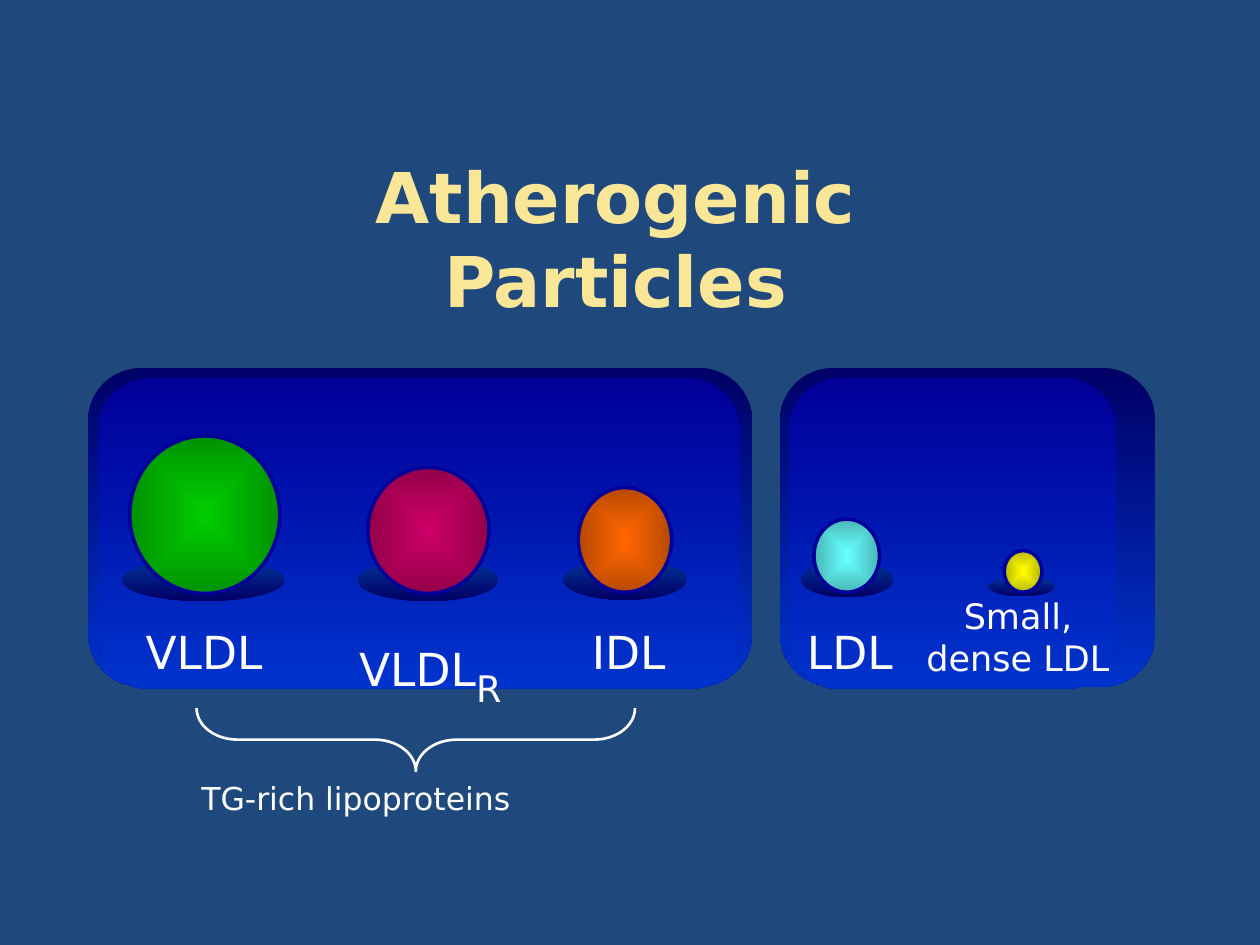
from dataclasses import dataclass

from lxml.etree import SubElement
from pptx import Presentation
from pptx.dml.color import RGBColor
from pptx.enum.shapes import MSO_SHAPE as Shape
from pptx.enum.text import MSO_AUTO_SIZE as AutoSize, PP_ALIGN as Align
from pptx.oxml.ns import qn
from pptx.util import Pt

PX = 9144  # 100 px to the inch


@dataclass(frozen=True)
class Theme:
    font: str = "DejaVu Sans"
    background: str = "1F497D"
    title: str = "F9E697"
    text: str = "FFFFFF"
    outline: str = "000099"
    panel_rim: tuple = ("000066", "0033CC")
    panel_face: tuple = ("000099", "0033CC")
    shadow: tuple = ("003399", "000066")
    title_size: int = 40
    label_size: int = 26
    subscript_size: int = 36
    small_size: int = 20
    note_size: int = 18


theme = Theme()
presentation = Presentation()
presentation.slide_width, presentation.slide_height = 1000 * PX, 750 * PX
slide = presentation.slides.add_slide(presentation.slide_layouts[6])
slide.background.fill.solid()
slide.background.fill.fore_color.rgb = RGBColor.from_string(theme.background)


def add_gradient_shape(kind, box, colors, radial=False):
    """Colours run top to bottom, or from the centre outwards if radial."""
    shape = slide.shapes.add_shape(kind, *(v * PX for v in box))
    shape.shadow.inherit = False
    shape.line.fill.background()
    shape.fill.gradient()
    shape.fill.gradient_angle = 270
    for stop, color, position in zip(shape.fill.gradient_stops, colors, (0, 1)):
        stop.color.rgb = RGBColor.from_string(color)
        stop.position = position
    if radial:
        gradient = shape._element.spPr.find(qn("a:gradFill"))
        linear = gradient.find(qn("a:lin"))
        path = SubElement(gradient, qn("a:path"), path="shape")
        SubElement(path, qn("a:fillToRect"), dict.fromkeys("ltrb", "50000"))
        gradient.replace(linear, path)
    return shape


def add_text(box, text, size, color=theme.text, align=Align.CENTER, wrap=False, bold=False):
    shape = slide.shapes.add_textbox(*(v * PX for v in box))
    frame = shape.text_frame
    frame.text = text
    frame.word_wrap = wrap
    frame.auto_size = AutoSize.SHAPE_TO_FIT_TEXT
    for paragraph in frame.paragraphs:
        paragraph.alignment = align
        for run in paragraph.runs:
            run.font.name = theme.font
            run.font.size = Pt(size)
            run.font.bold = bold
            run.font.color.rgb = RGBColor.from_string(color)
    return frame


# Panels: a dark rim with a lighter face on top
for box, colors in [
    ((619, 292, 298, 253), theme.panel_rim),
    ((70, 292, 527, 253), theme.panel_rim),
    ((626, 300, 260, 247), theme.panel_face),
    ((78, 300, 509, 247), theme.panel_face),
]:
    add_gradient_shape(Shape.ROUNDED_RECTANGLE, box, colors)

add_text((159, 117, 659, 145), "Atherogenic Particles", theme.title_size,
         theme.title, wrap=True, bold=True)
add_text((150, 613, 270, 40), "TG-rich lipoproteins", theme.note_size, align=Align.LEFT)

brace = slide.shapes.add_shape(Shape.LEFT_BRACE, 305 * PX, 413 * PX, 50 * PX, 348 * PX)
brace.rotation = 270
brace.adjustments[0], brace.adjustments[1] = 0.65, 0.5
brace.shadow.inherit = False
brace.fill.background()
brace.line.color.rgb = RGBColor.from_string(theme.text)
brace.line.width = Pt(1.5)

# Particles: label, label box, shadow box, ball box, ball colours
particles = [
    ("VLDL", (105, 490, 114, 54), (97, 444, 129, 33), (103, 346, 119, 125), ("00CC00", "009200")),
    ("VLDL", (273, 490, 137, 54), (284, 444, 111, 33), (292, 371, 96, 100), ("CC0066", "920049")),
    ("IDL", (457, 490, 84, 54), (447, 444, 98, 32), (459, 387, 74, 83), ("FF6600", "B64900")),
    ("LDL", (630, 490, 89, 54), (636, 446, 73, 28), (646, 412, 52, 58), ("66FFFF", "49B6B6")),
    ("Small,\ndense LDL", (708, 467, 200, 77), (785, 458, 52, 15), (797, 437, 30, 33),
     ("FFFF00", "B6B600")),
]
label_frames = []
for label, label_box, shadow_box, ball_box, colors in particles:
    two_lines = "\n" in label
    size = theme.small_size if two_lines else theme.label_size
    label_frames.append(add_text(label_box, label, size, wrap=two_lines))
    add_gradient_shape(Shape.OVAL, shadow_box, theme.shadow)
    ball = add_gradient_shape(Shape.OVAL, ball_box, colors, radial=True)
    ball.line.color.rgb = RGBColor.from_string(theme.outline)
    ball.line.width = Pt(2)

# The second particle is the VLDL remnant
subscript = label_frames[1].paragraphs[0].add_run()
subscript.text = "R"
subscript.font.name = theme.font
subscript.font.size = Pt(theme.subscript_size)
subscript.font.color.rgb = RGBColor.from_string(theme.text)
subscript.font._element.set("baseline", "-25000")

presentation.save("out.pptx")
